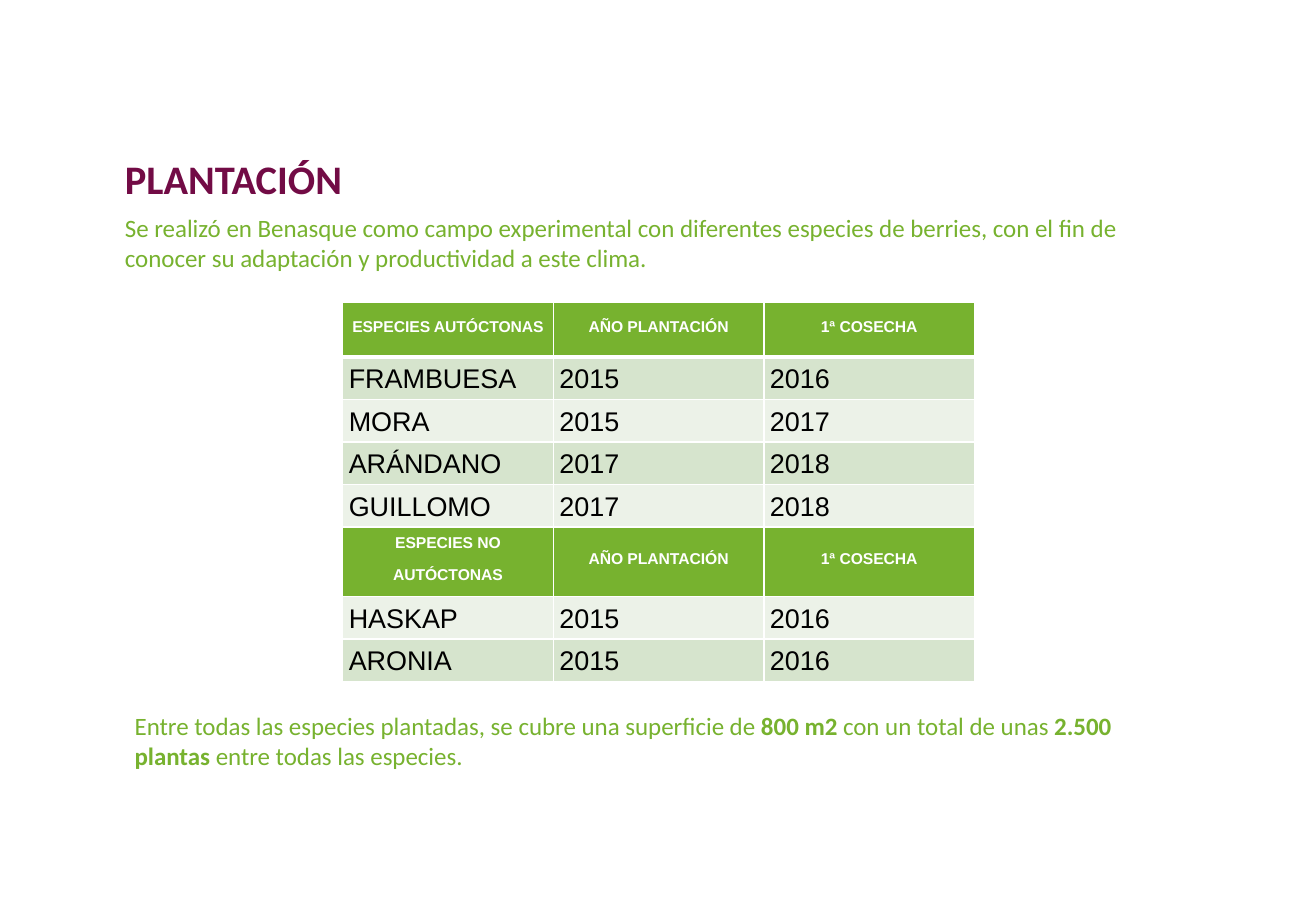
from dataclasses import dataclass

from lxml.etree import SubElement
from pptx import Presentation
from pptx.dml.color import RGBColor
from pptx.enum.text import MSO_ANCHOR as Anchor, PP_ALIGN as Align
from pptx.oxml.ns import qn
from pptx.util import Inches, Pt


@dataclass(frozen=True)
class Theme:
    green: str = "77B22F"
    plum: str = "720B45"
    white: str = "FFFFFF"
    black: str = "000000"
    bands: tuple = ("ECF2E8", "D6E4CD")
    text_font: str = "Calibri"
    table_font: str = "Arial"
    title_size: float = 24
    text_size: float = 14.8
    table_size: float = 16


THEME = Theme()
WIDTH, HEIGHT = 10.83, 7.5
UNIT = Inches(0.1)  # side of one grid square

TITLE_BOX = (9.3, 11.5, 92.9, 6.3)
INTRO_BOX = (9.3, 17, 89, 5.5)
TABLE_BOX = (28.2, 24.9, 52, 30)
SUMMARY_BOX = (10.1, 58, 89, 5.5)

INTRO = ("Se realizó en Benasque como campo experimental con diferentes especies "
         "de berries, con el fin de conocer su adaptación y productividad a este clima.")
SUMMARY = [
    ("Entre todas las especies plantadas, se cubre una superficie de", False),
    (" 800 m2 ", True),
    ("con un total de unas ", False),
    ("2.500 plantas ", True),
    ("entre todas las especies.", False),
]
HEADINGS = ("AÑO PLANTACIÓN", "1ª COSECHA")
SPECIES = [
    ("ESPECIES AUTÓCTONAS", *HEADINGS),
    ("FRAMBUESA", "2015", "2016"),
    ("MORA", "2015", "2017"),
    ("ARÁNDANO", "2017", "2018"),
    ("GUILLOMO", "2017", "2018"),
    ("ESPECIES NO AUTÓCTONAS", *HEADINGS),
    ("HASKAP", "2015", "2016"),
    ("ARONIA", "2015", "2016"),
]
HEADER_SHARE, ROW_SHARE = 0.15, 0.35 / 3


def on_grid(box):
    return [round(length * UNIT) for length in box]


def set_all(target, values):
    for name, value in values.items():
        setattr(target, name, value)


def add_span(para, text, name, size, colour, bold=False):
    span = para.add_run()
    span.text = text
    set_all(span.font, {"name": name, "size": Pt(size), "bold": bold})
    span.font.color.rgb = RGBColor.from_string(colour)
    return span


def add_text(page, box, spans, size, colour, anchor=Anchor.TOP):
    frame = page.shapes.add_textbox(*on_grid(box)).text_frame
    set_all(frame, {"word_wrap": True, "vertical_anchor": anchor})
    for text, bold in spans:
        add_span(frame.paragraphs[0], text, THEME.text_font, size, colour, bold)


def add_borders(cell, widths):
    properties = cell._tc.get_or_add_tcPr()
    for side, width in widths.items():
        line = SubElement(properties, qn(f"a:ln{side}"), w=str(Pt(width)))
        fill = SubElement(line, qn("a:solidFill"))
        SubElement(fill, qn("a:srgbClr"), val=THEME.white)


def fill_cell(cell, text, index, is_header):
    set_all(cell, {"vertical_anchor": Anchor.MIDDLE,
                   "margin_left": Inches(0.05), "margin_right": Inches(0.05),
                   "margin_top": 0, "margin_bottom": 0})
    add_borders(cell, {"L": 1, "R": 1, "T": 3 if index == 1 else 1,
                       "B": 3 if index == 0 else 1})
    cell.fill.solid()
    cell.fill.fore_color.rgb = RGBColor.from_string(
        THEME.green if is_header else THEME.bands[index % 2])
    para = cell.text_frame.paragraphs[0]
    set_all(para, {"alignment": Align.CENTER if is_header else Align.JUSTIFY,
                   "line_spacing": 1.07})
    span = add_span(para, text, THEME.table_font, THEME.table_size,
                    THEME.white if is_header else THEME.black, is_header)
    if is_header:
        span._r.get_or_add_rPr().set("baseline", "30000")


def add_species_table(page, box):
    left, top, width, height = on_grid(box)
    columns = len(SPECIES[0])
    table = page.shapes.add_table(len(SPECIES), columns, left, top, width, height).table
    for column in table.columns:
        column.width = width // columns
    for index, values in enumerate(SPECIES):
        is_header = values[1:] == HEADINGS
        table.rows[index].height = round(height * (HEADER_SHARE if is_header else ROW_SHARE))
        for cell, text in zip(table.rows[index].cells, values):
            fill_cell(cell, text, index, is_header)


def main():
    deck = Presentation()
    set_all(deck, {"slide_width": Inches(WIDTH), "slide_height": Inches(HEIGHT)})
    page = deck.slides.add_slide(deck.slide_layouts[6])
    add_text(page, TITLE_BOX, [("PLANTACIÓN", True)], THEME.title_size, THEME.plum,
             Anchor.MIDDLE)
    add_text(page, INTRO_BOX, [(INTRO, False)], THEME.text_size, THEME.green)
    add_species_table(page, TABLE_BOX)
    add_text(page, SUMMARY_BOX, SUMMARY, THEME.text_size, THEME.green)
    deck.save("out.pptx")


if __name__ == "__main__":
    main()
